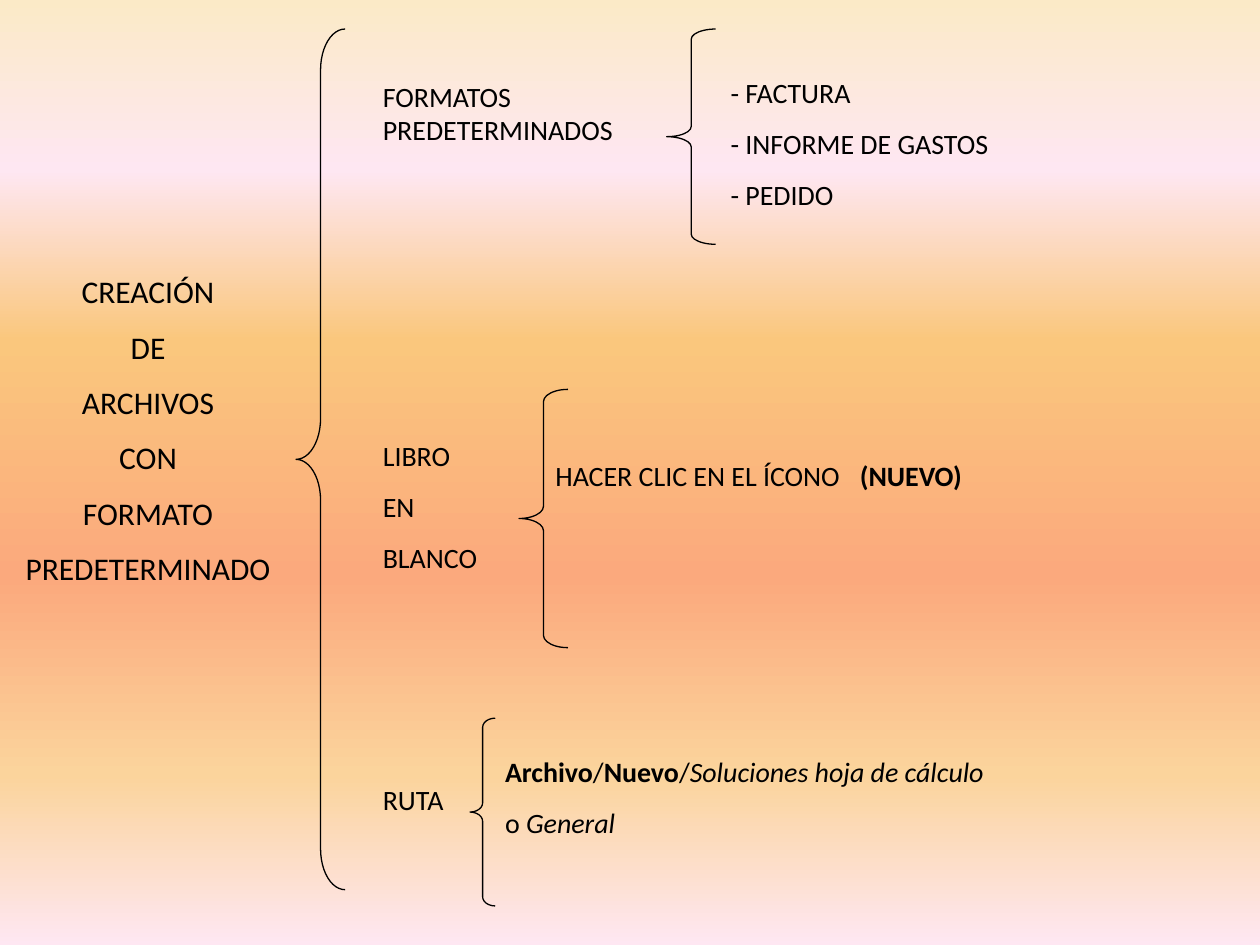
import pptx
import pptx.dml.color
import pptx.enum.shapes
import pptx.enum.text
import pptx.oxml
import pptx.oxml.ns
import pptx.util
from lxml import etree

Pt = pptx.util.Pt
qn = pptx.oxml.ns.qn
ALIGN = pptx.enum.text.PP_ALIGN


def rgb(value):
    return pptx.dml.color.RGBColor.from_string(value)


class Diagram:
    font = "Calibri"
    ink = "000000"
    title_size = 18
    size = 16
    gap = 10
    line_width = 0.75

    def __init__(self, slide):
        self.s = slide
        self.group = slide.shapes.add_group_shape()

    def background(self, stops):
        fill = self.s.background.fill
        fill.gradient()
        fill.gradient_angle = 270
        stop_list = self.s.element.find(".//" + qn("a:gsLst"))
        for old in list(stop_list):
            stop_list.remove(old)
        for percent, color in stops:
            gs = etree.SubElement(stop_list, qn("a:gs"), pos=str(percent * 1000))
            etree.SubElement(gs, qn("a:srgbClr"), val=color)

    def set_text(self, sp, paragraphs, size, align):
        """A paragraph is a string or a list of (text, style) with style b, i or ''."""
        tf = sp.text_frame
        tf.word_wrap = True
        tf.auto_size = pptx.enum.text.MSO_AUTO_SIZE.NONE
        tf.vertical_anchor = pptx.enum.text.MSO_ANCHOR.TOP
        for n, parts in enumerate(paragraphs):
            p = tf.add_paragraph() if n else tf.paragraphs[0]
            p.alignment = align
            p.space_after = Pt(self.gap)
            for text, style in [(parts, "")] if isinstance(parts, str) else parts:
                r = p.add_run()
                r.text = text
                r.font.name = self.font
                r.font.size = Pt(size)
                r.font.bold = style == "b"
                r.font.italic = style == "i"
                r.font.color.rgb = rgb(self.ink)

    def title(self, x, y, w, h, paragraphs):
        sp = self.s.shapes.title
        sp.left, sp.top, sp.width, sp.height = Pt(x), Pt(y), Pt(w), Pt(h)
        self.set_text(sp, paragraphs, self.title_size, ALIGN.CENTER)

    def text(self, x, y, w, h, paragraphs):
        sp = self.group.shapes.add_textbox(Pt(x), Pt(y), Pt(w), Pt(h))
        self.set_text(sp, paragraphs, self.size, ALIGN.LEFT)
        return sp

    def tab_stop(self, sp, position):
        for p in sp.text_frame.paragraphs:
            tabs = etree.SubElement(p._p.get_or_add_pPr(), qn("a:tabLst"))
            etree.SubElement(tabs, qn("a:tab"), pos=str(Pt(position)), algn="l")

    def brace(self, x, y, w, h, curve):
        kind = pptx.enum.shapes.MSO_SHAPE.LEFT_BRACE
        sp = self.group.shapes.add_shape(kind, Pt(x), Pt(y), Pt(w), Pt(h))
        sp.adjustments[0] = curve
        sp.adjustments[1] = 0.5
        sp.shadow.inherit = False
        sp.fill.background()
        sp.line.color.rgb = rgb(self.ink)
        sp.line.width = Pt(self.line_width)


def main():
    prs = pptx.Presentation()
    prs.slide_width, prs.slide_height = Pt(720), Pt(540)
    d = Diagram(prs.slides.add_slide(prs.slide_layouts[5]))
    d.background([(0, "FBEAC7"), (18, "FEE7F2"), (36, "FAC77D"),
                  (61, "FBA97D"), (82, "FBD49C"), (100, "FEE7F2")])

    # Root of the diagram
    d.title(0, 152, 169.2, 245.5,
            ["CREACIÓN", "DE", "ARCHIVOS", "CON", "FORMATO", "PREDETERMINADO"])
    d.brace(169.2, 16.6, 28, 491.8, 0.833)

    # Branches
    branch_x = 211.7
    d.text(branch_x, 41.8, 183.6, 98.6, ["FORMATOS PREDETERMINADOS"])
    d.text(branch_x, 247, 98.6, 123, ["LIBRO", "EN", "BLANCO"])
    d.text(branch_x, 443.5, 85, 73.4, ["RUTA"])

    # Braces of the branches
    d.brace(381, 16.6, 28, 123, 0.208)
    d.brace(296.6, 222.5, 28, 147.6, 0.25)
    d.brace(268.6, 410.4, 14.4, 107.3, 0.364)

    # Details
    d.text(410.4, 39.6, 254, 123, ["- FACTURA", "- INFORME DE GASTOS", "- PEDIDO"])
    icon = d.text(310.3, 258.5, 286, 67.7,
                  [[("HACER CLIC EN EL ÍCONO", ""), ("\t(NUEVO)", "b")]])
    d.tab_stop(icon, 174)
    d.text(281.5, 427.7, 381, 82.8, [
        [("Archivo", "b"), ("/", ""), ("Nuevo", "b"), ("/", ""),
         ("Soluciones hoja de cálculo", "i")],
        [("o ", ""), ("General", "i")],
    ])

    prs.save("out.pptx")


if __name__ == "__main__":
    main()
